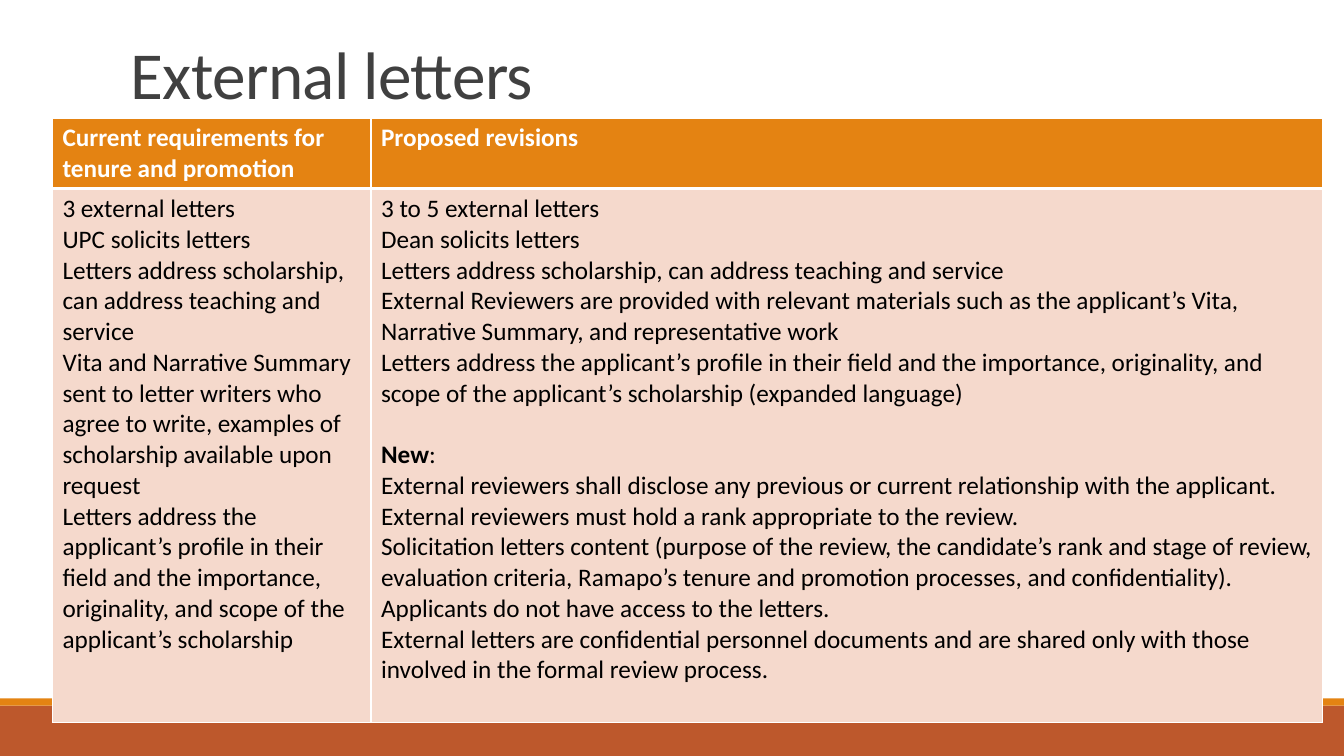
import dataclasses

import lxml.etree
import pptx
import pptx.dml.color
import pptx.enum.shapes
import pptx.enum.text
import pptx.oxml.ns
import pptx.util

Inches = pptx.util.Inches
Pt = pptx.util.Pt
qn = pptx.oxml.ns.qn

FONT = "Calibri"
WHITE, BLACK, GREY = "FFFFFF", "000000", "404040"
ORANGE, RUST, PINK = "E48312", "BD582C", "F5D9CC"


@dataclasses.dataclass
class Band:
    top: float
    height: float
    fill: str


@dataclasses.dataclass
class Row:
    height: float
    fill: str
    ink: str
    bold: bool
    edges: dict[str, float]
    cells: list[list[str]]


BANDS = [Band(7, 0.5, RUST), Band(6.93, 0.07, ORANGE)]
WIDTHS = [3.16, 9.44]
LEAD = "New"

ROWS = [
    Row(0.7, ORANGE, WHITE, True, {"L": 1, "R": 1, "T": 1, "B": 3}, [
        ["Current requirements for tenure and promotion"],
        ["Proposed revisions"],
    ]),
    Row(5.3, PINK, BLACK, False, {"L": 1, "R": 1, "T": 3, "B": 1}, [
        [
            "3 external letters",
            "UPC solicits letters",
            "Letters address scholarship, can address teaching and service",
            "Vita and Narrative Summary sent to letter writers who agree to write, "
            "examples of scholarship available upon request",
            "Letters address the applicant’s profile in their field and the importance, "
            "originality, and scope of the applicant’s scholarship",
        ],
        [
            "3 to 5 external letters",
            "Dean solicits letters",
            "Letters address scholarship, can address teaching and service",
            "External Reviewers are provided with relevant materials such as the "
            "applicant’s Vita, Narrative Summary, and representative work",
            "Letters address the applicant’s profile in their field and the importance, "
            "originality, and scope of the applicant’s scholarship (expanded language)",
            LEAD + ":",
            "External reviewers shall disclose any previous or current relationship "
            "with the applicant.",
            "External reviewers must hold a rank appropriate to the review.",
            "Solicitation letters content (purpose of the review, the candidate’s rank "
            "and stage of review, evaluation criteria, Ramapo’s tenure and promotion "
            "processes, and confidentiality).",
            "Applicants do not have access to the letters.",
            "External letters are confidential personnel documents and are shared only "
            "with those involved in the formal review process.",
        ],
    ]),
]


def tint(code: str) -> pptx.dml.color.RGBColor:
    return pptx.dml.color.RGBColor.from_string(code)


def style(run, size: float, ink: str, bold: bool = False) -> None:
    run.font.name = FONT
    run.font.size = Pt(size)
    run.font.bold = bold
    run.font.color.rgb = tint(ink)


def draw_band(slide, band: Band) -> None:
    bar = slide.shapes.add_shape(
        pptx.enum.shapes.MSO_SHAPE.RECTANGLE,
        0, Inches(band.top), Inches(13.33), Inches(band.height))
    bar.shadow.inherit = False
    bar.fill.solid()
    bar.fill.fore_color.rgb = tint(band.fill)
    bar.line.fill.background()


def draw_title(slide, text: str) -> None:
    box = slide.shapes.add_textbox(Inches(1.2), Inches(0.31), Inches(11), Inches(0.86))
    frame = box.text_frame
    frame.word_wrap = True
    frame.vertical_anchor = pptx.enum.text.MSO_ANCHOR.BOTTOM
    frame.text = text
    para = frame.paragraphs[0]
    para.line_spacing = 0.85
    run = para.runs[0]
    style(run, 48, GREY)
    run.font._element.set("spc", "-50")


def draw_edges(cell, edges: dict[str, float]) -> None:
    props = cell._tc.get_or_add_tcPr()
    for side, width in edges.items():
        line = lxml.etree.SubElement(props, qn(f"a:ln{side}"), w=str(Pt(width)))
        fill = lxml.etree.SubElement(line, qn("a:solidFill"))
        lxml.etree.SubElement(fill, qn("a:srgbClr"), val=WHITE)


def fill_cell(cell, row: Row, lines: list[str]) -> None:
    draw_edges(cell, row.edges)
    cell.fill.solid()
    cell.fill.fore_color.rgb = tint(row.fill)
    frame = cell.text_frame
    frame.text = "\n".join(lines)
    for para, line in zip(frame.paragraphs, lines):
        if line == LEAD + ":":
            # The bold lead stands one line below the text above it
            para.text = LEAD
            para.add_run().text = ":"
            para.space_before = Pt(22)
        for run in para.runs:
            style(run, 18, row.ink, row.bold or run.text == LEAD)


def draw_table(slide) -> None:
    table = slide.shapes.add_table(
        len(ROWS), len(WIDTHS), Inches(0.52), Inches(1.17),
        Inches(sum(WIDTHS)), Inches(sum(row.height for row in ROWS))).table
    for col, width in zip(table.columns, WIDTHS):
        col.width = Inches(width)
    for r, row in enumerate(ROWS):
        table.rows[r].height = Inches(row.height)
        for c, lines in enumerate(row.cells):
            fill_cell(table.cell(r, c), row, lines)


def main() -> None:
    deck = pptx.Presentation()
    deck.slide_width, deck.slide_height = Inches(13.33), Inches(7.5)
    slide = deck.slides.add_slide(deck.slide_layouts[6])

    # Footer bands
    for band in BANDS:
        draw_band(slide, band)

    # Title and table
    draw_title(slide, "External letters")
    draw_table(slide)
    deck.save("out.pptx")


if __name__ == "__main__":
    main()
